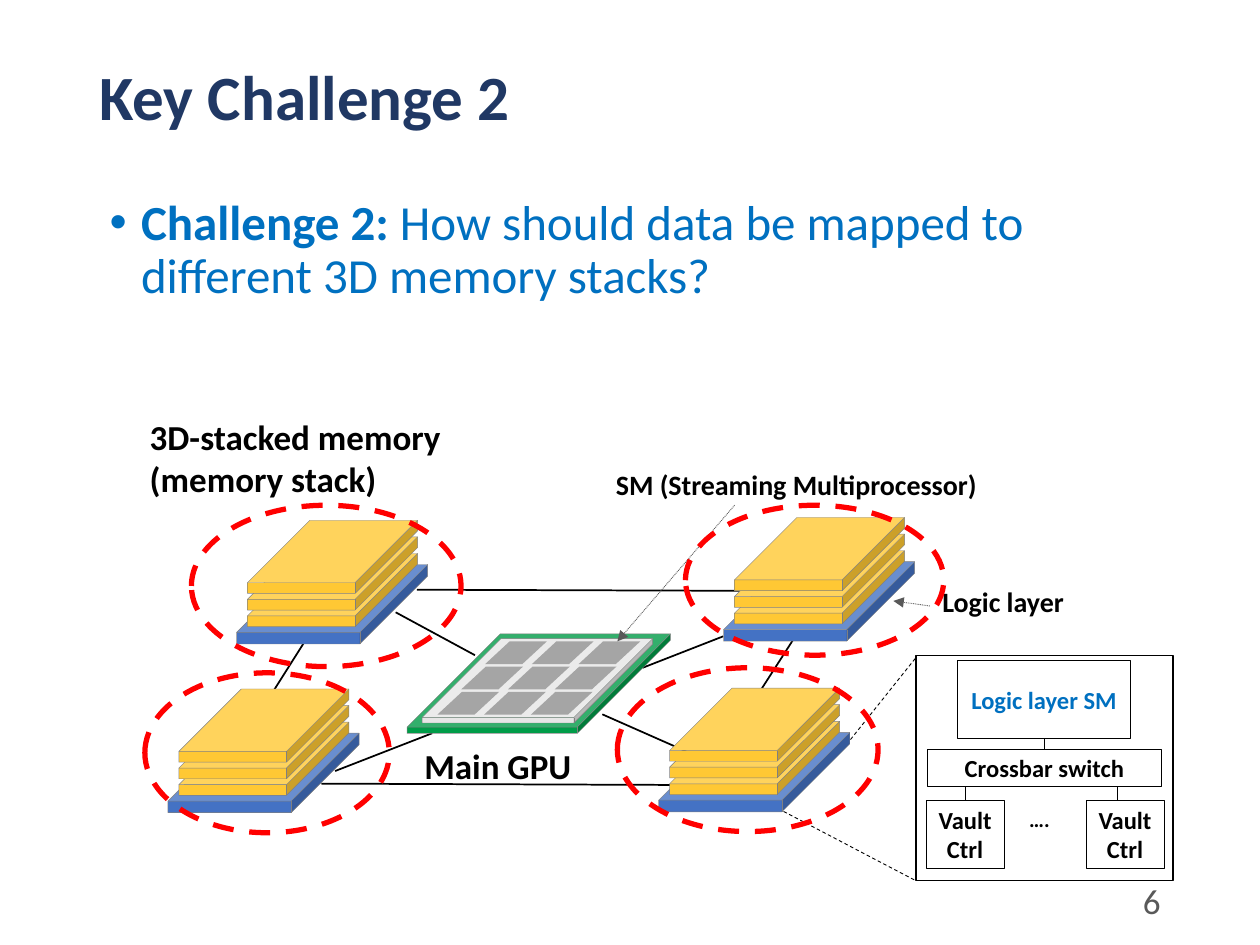
import lxml.etree
import pptx
import pptx.util
import pptx.dml.color
import pptx.enum.dml
import pptx.enum.shapes
import pptx.enum.text
import pptx.oxml.ns

Pt = pptx.util.Pt
qn = pptx.oxml.ns.qn
SHAPE = pptx.enum.shapes.MSO_SHAPE
DASH = pptx.enum.dml.MSO_LINE
ALIGN = pptx.enum.text.PP_ALIGN
ANCHOR = pptx.enum.text.MSO_ANCHOR

FONT = "Calibri"
COLORS = {
    "title": "203864", "accent": "0070C0", "black": "000000", "white": "FFFFFF",
    "grey": "595959", "edge": "808080", "logic": "4472C4", "memory": "FFC834",
    "board": "009C48", "die": "E7E6E6", "sm": "A5A5A5", "highlight": "FF0000",
}


def rgb(name):
    return pptx.dml.color.RGBColor.from_string(COLORS[name])


def format_span(span, size, color, bold):
    span.font.name = FONT
    span.font.size = Pt(size)
    span.font.bold = bold
    span.font.color.rgb = rgb(color)


def write_text(frame, text, size, color="black", bold=True, align=ALIGN.LEFT):
    frame.word_wrap = True
    frame.text = text
    for para in frame.paragraphs:
        para.alignment = align
        for span in para.runs:
            format_span(span, size, color, bold)


def place(shape, left, top, width, height):
    shape.left, shape.top = Pt(left), Pt(top)
    shape.width, shape.height = Pt(width), Pt(height)


def add_label(page, text, bounds, size, **style):
    box = page.shapes.add_textbox(*map(Pt, bounds))
    write_text(box.text_frame, text, size, **style)
    return box


def add_form(shapes, kind, bounds, fill=None, line=None, weight=0.25, adjust=None):
    """Add a preset shape; without a fill or line colour that part stays empty."""
    shape = shapes.add_shape(kind, *map(Pt, bounds))
    shape.shadow.inherit = False
    if adjust is not None:
        shape.adjustments[0] = adjust
    if fill:
        shape.fill.solid()
        shape.fill.fore_color.rgb = rgb(fill)
    else:
        shape.fill.background()
    if line:
        shape.line.color.rgb = rgb(line)
        shape.line.width = Pt(weight)
    else:
        shape.line.fill.background()
    return shape


def add_link(page, x1, y1, x2, y2, weight=1, color="black", dash=None, arrow=False):
    link = page.shapes.add_connector(
        pptx.enum.shapes.MSO_CONNECTOR.STRAIGHT, Pt(x1), Pt(y1), Pt(x2), Pt(y2))
    link.line.color.rgb = rgb(color)
    link.line.width = Pt(weight)
    if dash:
        link.line.dash_style = dash
    properties = link._element.find(qn("p:spPr"))
    if arrow:
        lxml.etree.SubElement(properties.find(qn("a:ln")), qn("a:tailEnd"), type="triangle")
    lxml.etree.SubElement(properties, qn("a:effectLst"))


def add_block(page, text, bounds, color="black", side_inset=7.2):
    block = add_form(page.shapes, SHAPE.RECTANGLE, bounds, "white", "black", 0.5)
    frame = block.text_frame
    write_text(frame, text, 14, color, align=ALIGN.CENTER)
    frame.vertical_anchor = ANCHOR.MIDDLE
    frame.margin_left = frame.margin_right = Pt(side_inset)


def add_memory_stack(page, left, top):
    """Draw a logic layer with three memory dies above it."""
    group = page.shapes.add_group_shape()
    add_form(group.shapes, SHAPE.CUBE, (left, top, 109.2, 45.4),
             "logic", "edge", adjust=0.854)
    for level in range(3):
        add_form(group.shapes, SHAPE.CUBE,
                 (left + 6.2, top - 6.3 - 9.5 * level, 97.2, 41.8),
                 "memory", "edge", adjust=0.854)


def add_gpu(page):
    add_form(page.shapes, SHAPE.CUBE, (232.6, 362.2, 150.5, 56.9),
             "board", "edge", adjust=0.936)
    add_form(page.shapes, SHAPE.CUBE, (241.2, 365, 131.8, 48.2),
             "die", "edge", adjust=0.936)
    group = page.shapes.add_group_shape()
    for row in range(3):
        for column in range(3):
            add_form(group.shapes, SHAPE.PARALLELOGRAM,
                     (277.2 + 26.7 * column - 13.6 * row, 366.5 + 14.4 * row, 35.3, 13),
                     "sm", adjust=1.079)


def add_logic_layer_detail(page):
    for line in ((486, 422.6, 523.4, 375.8), (447.8, 463.7, 523.4, 503.3)):
        add_link(page, *line, weight=0.5, dash=DASH.DASH)
    add_form(page.shapes, SHAPE.RECTANGLE, (523.4, 374.4, 146.9, 128.9),
             line="black", weight=0.75)
    add_block(page, "Logic layer SM", (547.2, 377.3, 98.8, 45), "accent")
    add_block(page, "Crossbar switch", (529.9, 428.4, 133.9, 20.9))
    for left in (529.2, 620.6):
        add_block(page, "Vault Ctrl", (left, 457.2, 44.6, 38.9), side_inset=0)
    add_label(page, "….", (581, 457.2, 33.8, 21.6), 12)
    for x, top, bottom in ((596.9, 422, 428.4), (551.5, 449.3, 457.2), (638.6, 449.3, 457.2)):
        add_link(page, x, top, x, bottom, weight=0.5)


def add_title_and_question(page):
    title, body = page.placeholders
    place(title, 49.7, 28.8, 620.6, 56.9)
    write_text(title.text_frame, "Key Challenge 2", 36, "title")
    title.text_frame.vertical_anchor = ANCHOR.MIDDLE
    title.text_frame.paragraphs[0].line_spacing = 0.9

    place(body, 55.4, 109.4, 614.2, 85)
    frame = body.text_frame
    frame.auto_size = pptx.enum.text.MSO_AUTO_SIZE.NONE
    write_text(frame, "Challenge 2:", 28, "accent")
    para = frame.paragraphs[0]
    question = para.add_run()
    question.text = " How should data be mapped to different 3D memory stacks?"
    format_span(question, 28, "accent", False)
    para.line_spacing = 0.9
    para.space_before = Pt(10)
    indents = para._p.get_or_add_pPr()
    indents.set("marL", str(int(Pt(18))))
    indents.set("indent", str(int(Pt(-18))))


def main():
    deck = pptx.Presentation()
    deck.slide_width, deck.slide_height = Pt(720), Pt(540)
    page = deck.slides.add_slide(deck.slide_layouts[1])
    add_title_and_question(page)
    number = add_label(page, "6", (508.3, 500.4, 162, 28.8), 20,
                       color="grey", bold=False, align=ALIGN.RIGHT)
    number.text_frame.vertical_anchor = ANCHOR.MIDDLE
    add_logic_layer_detail(page)

    for link in ((191.5, 440.6, 247, 419), (367.2, 381.6, 413.3, 363.6),
                 (174.2, 366.5, 134.6, 429.1), (453.6, 365, 413.3, 427.7),
                 (183.6, 447.8, 397.4, 448.6), (238.3, 337, 451.4, 337.7),
                 (226.1, 349.9, 271.4, 374.4), (344.2, 408.2, 429.1, 445.7)):
        add_link(page, *link)

    for left, top in ((135.2, 322.6), (96, 419), (413.5, 321), (376.4, 418.5)):
        add_memory_stack(page, left, top)
    add_gpu(page)

    for arrow in ((531.4, 346.3, 510.5, 343.4), (419.8, 288.7, 352.8, 366.5)):
        add_link(page, *arrow, weight=0.5, color="grey", dash=DASH.ROUND_DOT, arrow=True)
    for text, bounds, size in (
            ("Logic layer", (531.4, 330.5, 107.3, 26.6), 16),
            ("Main GPU", (235.4, 421.9, 126.7, 31.7), 20),
            ("3D-stacked memory\n(memory stack)", (78.5, 234, 220.3, 55.4), 20),
            ("SM (Streaming Multiprocessor)", (344.9, 263.5, 266.4, 26.6), 16)):
        add_label(page, text, bounds, size)

    for bounds in ((109.4, 288.7, 154.1, 92.2), (82.8, 384.5, 139.7, 91.4),
                   (352.8, 381.6, 149, 93.6), (391.7, 288.7, 147.6, 85.7)):
        ring = add_form(page.shapes, SHAPE.OVAL, bounds, line="highlight", weight=3)
        ring.line.dash_style = DASH.DASH
    deck.save("out.pptx")


if __name__ == "__main__":
    main()
